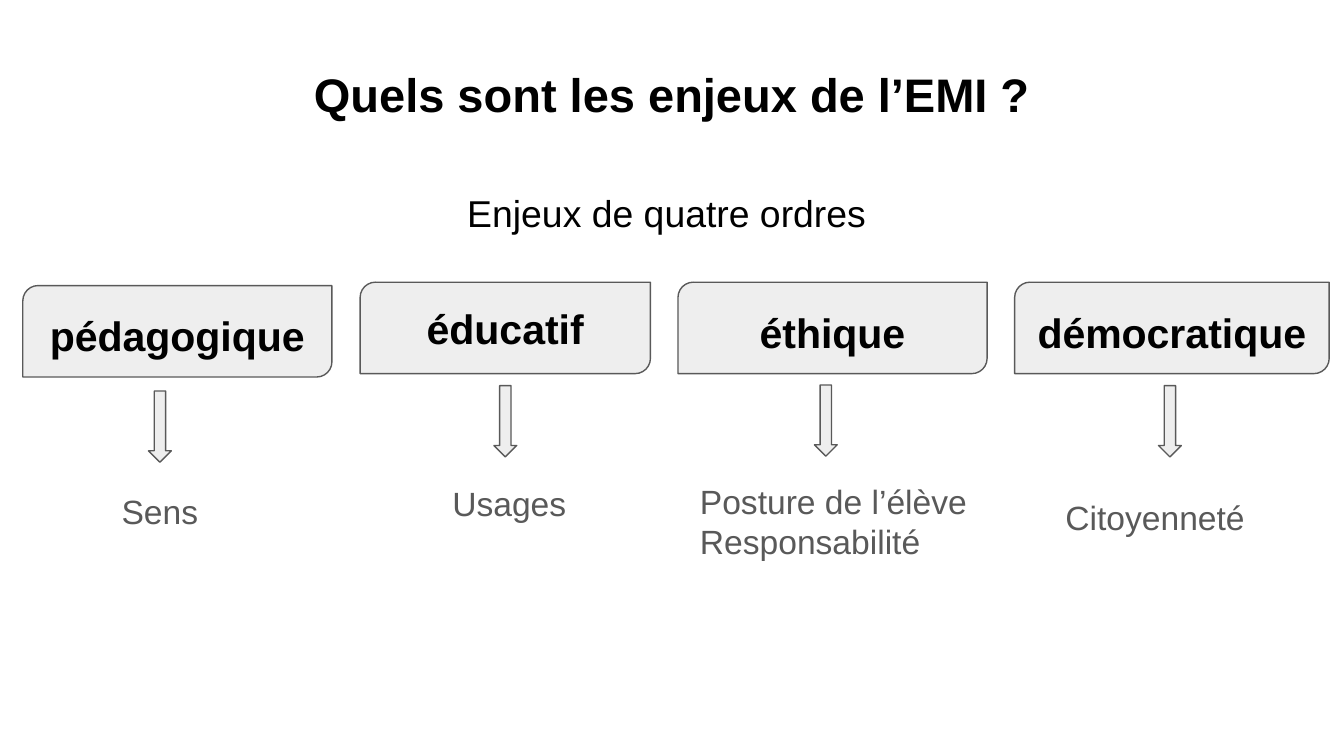
from dataclasses import dataclass

from pptx import Presentation
from pptx.dml.color import RGBColor
from pptx.enum.shapes import MSO_SHAPE
from pptx.enum.text import MSO_ANCHOR, MSO_AUTO_SIZE, PP_ALIGN
from pptx.shapes.autoshape import Shape
from pptx.slide import Slide
from pptx.util import Inches, Pt

CARD = MSO_SHAPE.ROUND_2_DIAG_RECTANGLE
ARROW = MSO_SHAPE.DOWN_ARROW
CENTER, LEFT = PP_ALIGN.CENTER, PP_ALIGN.LEFT
TOP, MIDDLE, BOTTOM = MSO_ANCHOR.TOP, MSO_ANCHOR.MIDDLE, MSO_ANCHOR.BOTTOM

# 16:9 slide on a grid of square cells: 100 columns across its width
SLIDE_WIDTH = Inches(10)
SLIDE_HEIGHT = SLIDE_WIDTH * 9 // 16
CELL = SLIDE_WIDTH // 100
CARD_HEIGHT = 6.8
ARROW_WIDTH, ARROW_HEIGHT = 1.7, 5.3
TITLE_LAYOUT = 5


@dataclass(frozen=True)
class Theme:
    font: str = "Arial"
    ink: RGBColor = RGBColor(0x00, 0x00, 0x00)
    grey: RGBColor = RGBColor(0x59, 0x59, 0x59)
    panel: RGBColor = RGBColor(0xEE, 0xEE, 0xEE)
    title_size: float = 25.2
    subtitle_size: float = 20
    card_size: float = 22
    outcome_size: float = 18
    outline: float = 0.75


@dataclass(frozen=True)
class Box:
    col: float
    row: float
    cols: float
    rows: float


@dataclass(frozen=True)
class TextStyle:
    size: float
    color: RGBColor
    bold: bool = False
    align: PP_ALIGN = CENTER
    anchor: MSO_ANCHOR = TOP
    spacing: float = 1.0
    before: float = 0
    after: float = 0


@dataclass(frozen=True)
class Stake:
    name: str
    card: Box
    arrow_col: float
    arrow_row: float
    outcomes: tuple[str, ...]
    outcome_box: Box
    spacing: float = 1.15
    outcome_align: PP_ALIGN = CENTER


THEME = Theme()

STAKES = (
    Stake("pédagogique", Box(1.7, 21.25, 23, CARD_HEIGHT), 11.05, 29.1,
          ("Sens",), Box(1.1, 35.5, 21.6, 6.3)),
    Stake("éducatif", Box(26.8, 21, 21.6, CARD_HEIGHT), 36.75, 28.7,
          ("Usages",), Box(27.1, 34.95, 21.6, 6.3), spacing=1.0),
    Stake("éthique", Box(50.45, 21, 23, CARD_HEIGHT), 60.6, 28.65,
          ("Posture de l’élève", "Responsabilité"),
          Box(51.1, 34.8, 25, 9.6), outcome_align=LEFT),
    Stake("démocratique", Box(75.5, 21, 23.4, CARD_HEIGHT), 86.2, 28.7,
          ("Citoyenneté",), Box(74.8, 36, 22.3, 7.5)),
)


def place(box: Box) -> tuple[int, int, int, int]:
    """Convert grid cells to slide lengths."""
    return tuple(round(n * CELL) for n in (box.col, box.row, box.cols, box.rows))


def write(shape: Shape, lines: tuple[str, ...], style: TextStyle) -> None:
    frame = shape.text_frame
    frame.word_wrap = True
    frame.auto_size = MSO_AUTO_SIZE.NONE
    frame.vertical_anchor = style.anchor
    frame.margin_left = frame.margin_right = CELL
    frame.margin_top = frame.margin_bottom = CELL
    for index, line in enumerate(lines):
        paragraph = frame.add_paragraph() if index else frame.paragraphs[0]
        paragraph.alignment = style.align
        paragraph.line_spacing = style.spacing
        paragraph.space_before = Pt(style.before)
        paragraph.space_after = Pt(style.after)
        run = paragraph.add_run()
        run.text = line
        run.font.name = THEME.font
        run.font.size = Pt(style.size)
        run.font.bold = style.bold
        run.font.color.rgb = style.color


def add_text(slide: Slide, box: Box, lines: tuple[str, ...], style: TextStyle) -> None:
    write(slide.shapes.add_textbox(*place(box)), lines, style)


def add_panel(slide: Slide, kind: MSO_SHAPE, box: Box) -> Shape:
    panel = slide.shapes.add_shape(kind, *place(box))
    panel.shadow.inherit = False
    panel.fill.solid()
    panel.fill.fore_color.rgb = THEME.panel
    panel.line.color.rgb = THEME.grey
    panel.line.width = Pt(THEME.outline)
    return panel


def add_stake(slide: Slide, stake: Stake) -> None:
    card = add_panel(slide, CARD, stake.card)
    spaced = 1 if stake.spacing > 1 else 0
    write(card, (stake.name,),
          TextStyle(THEME.card_size, THEME.ink, bold=True, anchor=MIDDLE,
                    spacing=stake.spacing, before=spaced, after=spaced))
    add_panel(slide, ARROW,
              Box(stake.arrow_col, stake.arrow_row, ARROW_WIDTH, ARROW_HEIGHT))
    add_text(slide, stake.outcome_box, stake.outcomes,
             TextStyle(THEME.outcome_size, THEME.grey, align=stake.outcome_align))


def main() -> None:
    deck = Presentation()
    deck.slide_width, deck.slide_height = SLIDE_WIDTH, SLIDE_HEIGHT
    slide = deck.slides.add_slide(deck.slide_layouts[TITLE_LAYOUT])

    # Title
    title = slide.shapes.title
    title.left, title.top, title.width, title.height = place(Box(3.4, 3.8, 93.2, 6.3))
    write(title, ("Quels sont les enjeux de l’EMI ?",),
          TextStyle(THEME.title_size, THEME.ink, bold=True, anchor=BOTTOM))

    # Subtitle
    add_text(slide, Box(3.4, 12.65, 93.2, 37.4), ("Enjeux de quatre ordres ",),
             TextStyle(THEME.subtitle_size, THEME.ink, spacing=1.15, before=1))

    # Four stakes, each leading to its outcome
    for stake in STAKES:
        add_stake(slide, stake)

    deck.save("out.pptx")


if __name__ == "__main__":
    main()
